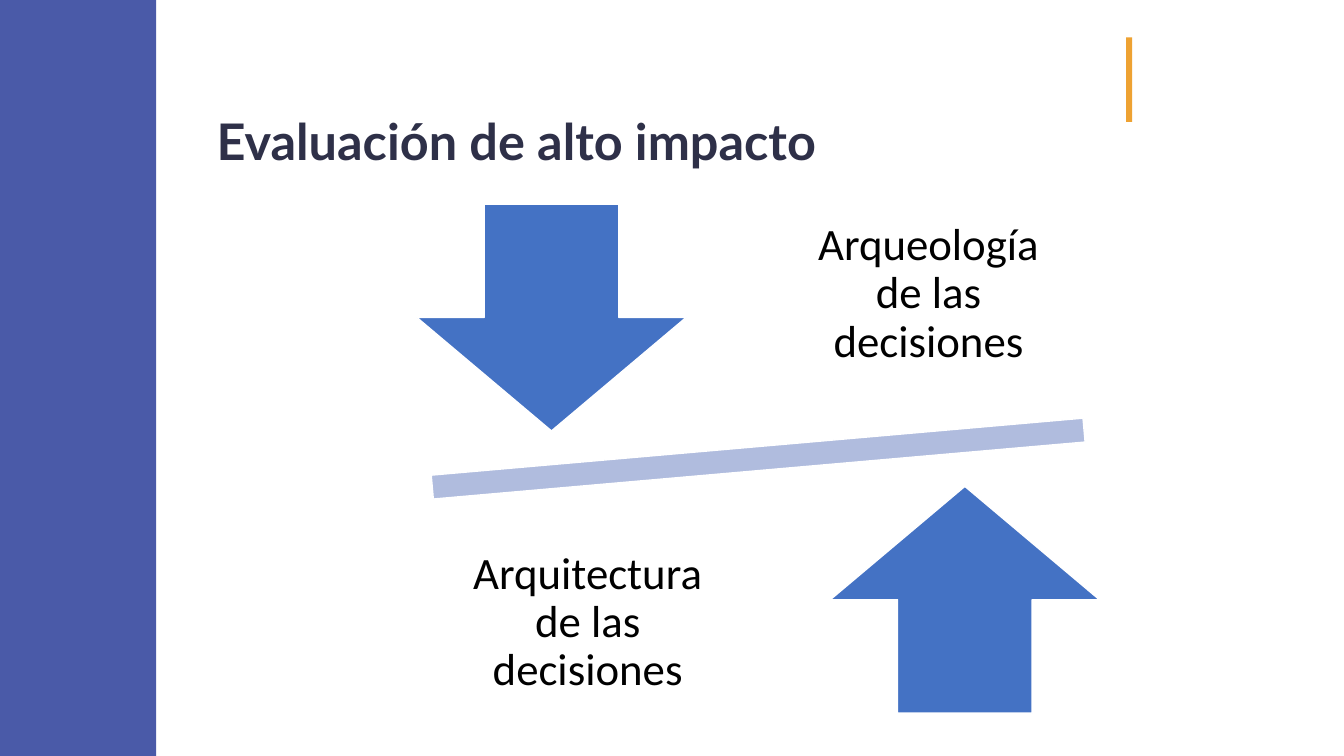
from pptx import Presentation
from pptx.dml.color import RGBColor
from pptx.enum.shapes import MSO_SHAPE as Kind
from pptx.enum.text import MSO_ANCHOR as Anchor, PP_ALIGN as Align
from pptx.util import Inches, Pt

INDIGO = RGBColor(0x4A, 0x5A, 0xA8)
ORANGE = RGBColor(0xEE, 0xA2, 0x32)
NAVY = RGBColor(0x2E, 0x30, 0x48)
BLUE = RGBColor(0x44, 0x72, 0xC4)
PALE = RGBColor(0xB0, 0xBC, 0xDE)
WHITE = RGBColor(0xFF, 0xFF, 0xFF)
BLACK = RGBColor(0, 0, 0)

WIDE, HIGH = 13.33, 7.5

deck = Presentation()
deck.slide_width, deck.slide_height = Inches(WIDE), Inches(HIGH)
slide = deck.slides.add_slide(deck.slide_layouts[6])


def add_form(kind, box, fill, edge=None):
    form = slide.shapes.add_shape(kind, *map(Inches, box))
    form.shadow.inherit = False
    form.fill.solid()
    form.fill.fore_color.rgb = fill
    if edge is None:
        form.line.fill.background()
    else:
        form.line.color.rgb = edge
        form.line.width = Pt(1)
    return form


def add_text(words, box, face, size, color, bold=False, align=Align.LEFT, inset=None):
    frame = slide.shapes.add_textbox(*map(Inches, box)).text_frame
    frame.word_wrap = True
    frame.vertical_anchor = Anchor.MIDDLE
    if inset is not None:
        frame.margin_left = frame.margin_right = Inches(inset)
        frame.margin_top = frame.margin_bottom = Inches(inset)
    frame.text = words
    para = frame.paragraphs[0]
    para.alignment = align
    para.line_spacing = 0.9
    font = para.runs[0].font
    font.name, font.size, font.bold = face, Pt(size), bold
    font.color.rgb = color


# Side band, accent and title
add_form(Kind.RECTANGLE, (0, 0, 1.55, HIGH), INDIGO)
add_form(Kind.RECTANGLE, (11.17, 0.37, 0.06, 0.84), ORANGE)
add_text("Evaluación de alto impacto", (2.05, 0.87, 8.95, 1.13), "Lato", 36, NAVY, bold=True)

# Tilted beam; arrows and labels mirror each other about its middle
mid_x, mid_y = 7.52, 4.55
beam_w, beam_h = 8.83, 1.01
beam = add_form(Kind.MATH_MINUS, (mid_x - beam_w / 2, mid_y - beam_h / 2, beam_w, beam_h), PALE, WHITE)
beam.rotation = 355

arrow_w, arrow_h = 2.67, 2.25
label_w, label_h = 2.84, 2.36
sides = [
    (-1, Kind.DOWN_ARROW, "Arqueología de las decisiones"),
    (1, Kind.UP_ARROW, "Arquitectura de las decisiones"),
]
for sign, kind, words in sides:
    left = mid_x + sign * 2.05 - arrow_w / 2
    top = mid_y + sign * 1.4 - arrow_h / 2
    add_form(kind, (left, top, arrow_w, arrow_h), BLUE, WHITE)
    left = mid_x - sign * 1.69 - label_w / 2
    top = mid_y + sign * 1.63 - label_h / 2
    add_text(words, (left, top, label_w, label_h), "Calibri", 32, BLACK,
             align=Align.CENTER, inset=0.25)

deck.save("out.pptx")
